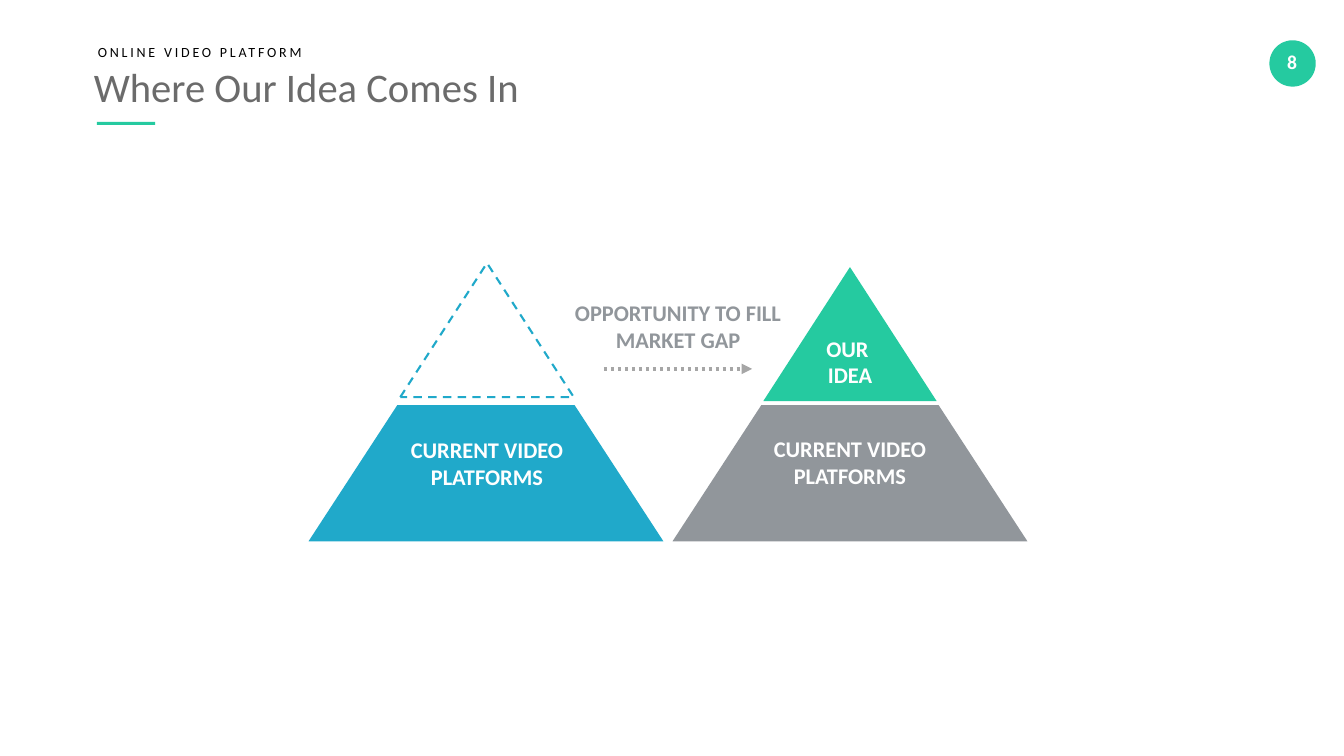
from lxml import etree
from pptx import Presentation
from pptx import util as u
from pptx.dml.color import RGBColor
from pptx.enum import dml, shapes, text
from pptx.oxml.ns import qn

GREEN = RGBColor(0x25, 0xCA, 0xA0)
BLUE = RGBColor(0x20, 0xA9, 0xCA)
GRAY = RGBColor(0x91, 0x96, 0x9B)
SILVER = RGBColor(0xA6, 0xA6, 0xA6)
SLATE = RGBColor(0x6B, 0x6B, 0x6B)
BLACK = RGBColor(0, 0, 0)
WHITE = RGBColor(255, 255, 255)
KIND = shapes.MSO_SHAPE
LEFT, MID = text.PP_ALIGN.LEFT, text.PP_ALIGN.CENTER
TOP, CENTER = text.MSO_ANCHOR.TOP, text.MSO_ANCHOR.MIDDLE


def add_form(slide, kind, box, fill=None):
    form = slide.shapes.add_shape(kind, *map(u.Inches, box))
    form.shadow.inherit = False
    form.line.fill.background()
    if fill is None:
        form.fill.background()
    else:
        form.fill.solid()
        form.fill.fore_color.rgb = fill
    return form


def add_text(slide, box, lines, size, color, bold=False, align=MID,
             anchor=TOP, pad=(0.13, 0.07), wrap=False, space=0):
    """Add one paragraph per line; pad is (side, top), space is in points."""
    frame = slide.shapes.add_textbox(*map(u.Inches, box)).text_frame
    frame.word_wrap = wrap
    frame.vertical_anchor = anchor
    frame.margin_left = frame.margin_right = u.Inches(pad[0])
    frame.margin_top = frame.margin_bottom = u.Inches(pad[1])
    for i, line in enumerate(lines):
        para = frame.add_paragraph() if i else frame.paragraphs[0]
        para.alignment = align
        run = para.add_run()
        run.text = line
        font = run.font
        font.name, font.size, font.bold = "Calibri", u.Pt(size), bold
        font.color.rgb = color
        if space:
            font._element.set("spc", str(space * 100))


def add_label(slide, box, lines, color=WHITE, wrap=True):
    add_text(slide, box, lines, 16, color, bold=True, wrap=wrap)


def add_base(slide, left, fill):
    base = add_form(slide, KIND.TRAPEZOID, (left, 4.02, 3.52, 1.35), fill)
    base.adjustments[0] = 0.652


def add_peak(slide, left, top, fill=None):
    return add_form(slide, KIND.ISOSCELES_TRIANGLE, (left, top, 1.72, 1.33), fill)


def add_arrow(slide, start, end, y):
    arrow = slide.shapes.add_connector(
        shapes.MSO_CONNECTOR.STRAIGHT,
        u.Inches(start), u.Inches(y), u.Inches(end), u.Inches(y))
    line = arrow.line
    line.color.rgb = SILVER
    line.width = u.Pt(2.5)
    line.dash_style = dml.MSO_LINE.ROUND_DOT
    props = arrow._element.spPr
    etree.SubElement(props.find(qn("a:ln")), qn("a:tailEnd"), type="triangle")
    etree.SubElement(props, qn("a:effectLst"))


def add_header(slide):
    add_form(slide, KIND.OVAL, (12.59, 0.4, 0.46, 0.46), GREEN)
    add_text(slide, (12.6, 0.45, 0.43, 0.34), ["8"], 14, WHITE,
             bold=True, pad=(0.1, 0.05))
    add_text(slide, (0.93, 0.61, 4.25, 0.49), ["Where Our Idea Comes In"],
             29, SLATE, align=LEFT, anchor=CENTER, pad=(0, 0))
    add_text(slide, (0.97, 0.43, 2.08, 0.17), ["ONLINE VIDEO PLATFORM"],
             10, BLACK, align=LEFT, anchor=CENTER, pad=(0, 0), space=2)
    add_form(slide, KIND.RECTANGLE, (0.96, 1.21, 0.58, 0.03), GREEN)


def add_market(slide):
    """Draw the pyramid with a missing peak beside the completed one."""
    add_base(slide, 6.67, GRAY)
    gap = add_peak(slide, 3.97, 2.61)
    gap.line.color.rgb = BLUE
    gap.line.width = u.Pt(1.5)
    gap.line.dash_style = dml.MSO_LINE.DASH
    add_base(slide, 3.06, BLUE)
    for left, top in ((3.81, 4.26), (7.41, 4.25)):
        add_label(slide, (left, top, 2.04, 0.67), ["CURRENT VIDEO PLATFORMS"])
    add_peak(slide, 7.57, 2.65, GREEN)
    add_label(slide, (7.84, 3.25, 1.18, 0.67), ["OUR ", "IDEA"])
    add_label(slide, (5.55, 2.9, 2.35, 0.67),
              ["OPPORTUNITY TO FILL", "MARKET GAP"], GRAY, wrap=False)
    add_arrow(slide, 5.99, 7.46, 3.66)


def main():
    deck = Presentation()
    deck.slide_width, deck.slide_height = u.Inches(13.33), u.Inches(7.5)
    slide = deck.slides.add_slide(deck.slide_layouts[6])
    add_header(slide)
    add_market(slide)
    deck.save("out.pptx")


if __name__ == "__main__":
    main()
